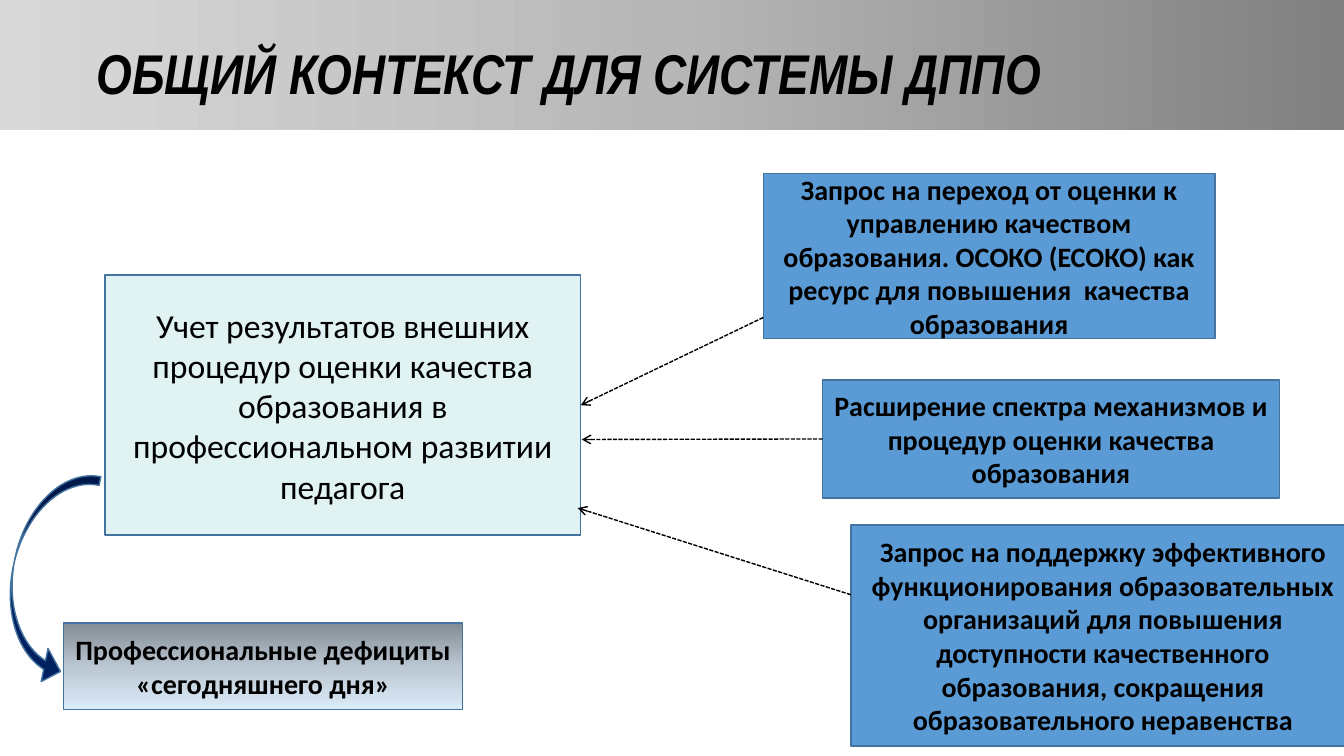
from copy import deepcopy
from dataclasses import dataclass

from lxml import etree
from pptx import Presentation
from pptx.dml.color import RGBColor
from pptx.enum.dml import MSO_LINE
from pptx.enum.shapes import MSO_CONNECTOR, MSO_SHAPE
from pptx.enum.text import MSO_ANCHOR, MSO_AUTO_SIZE, PP_ALIGN
from pptx.oxml.ns import qn
from pptx.util import Inches, Pt

RECT = MSO_SHAPE.RECTANGLE
CURVE = MSO_SHAPE.CURVED_RIGHT_ARROW
STRAIGHT = MSO_CONNECTOR.STRAIGHT
DASH = MSO_LINE.SQUARE_DOT
MIDDLE = MSO_ANCHOR.MIDDLE
FIXED = MSO_AUTO_SIZE.NONE
LEFT, CENTER = PP_ALIGN.LEFT, PP_ALIGN.CENTER
RIGHT_SIDE, LEFT_SIDE = 3, 1


@dataclass(frozen=True)
class Theme:
    head: str = "Arial Narrow"
    body: str = "Calibri"
    ink: str = "000000"
    edge: str = "43739E"
    blue: str = "5B9BD5"
    mint: str = "E1F2F3"
    navy: str = "002060"
    grey: tuple = ("808080", "B7B7B7", "D9D9D9")
    steel: tuple = ("838B93", "BAC6D1", "DCEBF8")
    big: int = 40
    mid: int = 24
    small: int = 20


theme = Theme()

TITLE = "ОБЩИЙ КОНТЕКСТ ДЛЯ СИСТЕМЫ ДППО"
BOXES = {
    "support": (
        "Запрос на поддержку эффективного функционирования образовательных "
        "организаций для повышения доступности качественного образования, "
        "сокращения образовательного неравенства",
        (8.44, 5.21, 5, 2.19), theme.blue, theme.small, True),
    "quality": (
        "Запрос на переход от оценки к управлению качеством образования. "
        "ОСОКО (ЕСОКО) как ресурс для повышения  качества образования",
        (7.57, 1.72, 4.48, 1.64), theme.blue, theme.small, True),
    "results": (
        "Учет результатов внешних процедур оценки качества образования "
        "в профессиональном развитии педагога",
        (1.04, 2.73, 4.72, 2.58), theme.mint, theme.mid, False),
    "methods": (
        "Расширение спектра механизмов и процедур оценки качества образования",
        (8.16, 3.77, 4.53, 1.17), theme.blue, theme.small, True),
    "gaps": (
        "Профессиональные дефициты «сегодняшнего дня»",
        (0.63, 6.18, 3.96, 0.86), theme.steel, theme.small, True),
}
ARROWS = {
    "methods": ((8.16, 4.36), (5.77, 4.36)),
    "quality": ((7.57, 3.15), (5.73, 4.02)),
    "support": ((8.44, 5.9), (5.73, 5.04)),
}
CURVE_AT = (0.12, 4.64, 0.67, 2.14)
CURVE_TURN = 11.7
CURVE_ADJ = (0.13, 0.5, 0.25)


def color(code):
    return RGBColor.from_string(code)


def paint(shape, tone, angle=270):
    fill = shape.fill
    if isinstance(tone, str):
        fill.solid()
        fill.fore_color.rgb = color(tone)
        return
    fill.gradient()
    fill.gradient_angle = angle
    stops = shape._element.spPr.find(qn("a:gradFill")).find(qn("a:gsLst"))
    stops.append(deepcopy(stops[-1]))
    for i, (stop, code) in enumerate(zip(fill.gradient_stops, tone)):
        stop.position = i / (len(tone) - 1)
        stop.color.rgb = color(code)


def write(shape, text, font, size, bold, align, slant=False):
    frame = shape.text_frame
    frame.word_wrap = True
    frame.auto_size = FIXED
    frame.vertical_anchor = MIDDLE
    para = frame.paragraphs[0]
    para.alignment = align
    run = para.add_run()
    run.text = text
    run.font.name = font
    run.font.size = Pt(size)
    run.font.bold = bold
    run.font.italic = slant
    run.font.color.rgb = color(theme.ink)
    return para


def place(slide, kind, area, tone):
    shape = slide.shapes.add_shape(kind, *map(Inches, area))
    shape.shadow.inherit = False
    paint(shape, tone)
    shape.line.color.rgb = color(theme.edge)
    shape.line.width = Pt(1)
    return shape


def link(slide, start, end):
    arrow = slide.shapes.add_connector(STRAIGHT, *map(Inches, start + end))
    arrow.line.color.rgb = color(theme.ink)
    arrow.line.width = Pt(1)
    arrow.line.dash_style = DASH
    tip = etree.SubElement(arrow.line._get_or_add_ln(), qn("a:tailEnd"))
    tip.set("type", "arrow")
    etree.SubElement(arrow._element.spPr, qn("a:effectLst"))
    return arrow


def main():
    deck = Presentation()
    deck.slide_width, deck.slide_height = Inches(13.33), Inches(7.5)
    slide = deck.slides.add_slide(deck.slide_layouts[5])

    title = slide.shapes.title
    title.left, title.top = Inches(0), Inches(0)
    title.width, title.height = deck.slide_width, Inches(1.29)
    paint(title, theme.grey, 180)
    para = write(title, TITLE, theme.head, theme.big, True, LEFT, True)
    para.line_spacing = 1.2
    para.space_before = Pt(theme.big * 0.2)
    props = para._p.get_or_add_pPr()
    props.set("marL", str(Inches(0.37)))
    props.set("indent", str(Inches(0.49)))

    boxes = {}
    for name, (text, area, tone, size, bold) in BOXES.items():
        boxes[name] = place(slide, RECT, area, tone)
        write(boxes[name], text, theme.body, size, bold, CENTER)

    arrows = {name: link(slide, *ends) for name, ends in ARROWS.items()}
    arrows["methods"].begin_connect(boxes["methods"], LEFT_SIDE)
    arrows["quality"].end_connect(boxes["results"], RIGHT_SIDE)

    curve = place(slide, CURVE, CURVE_AT, theme.navy)
    curve.rotation = CURVE_TURN
    for i, ratio in enumerate(CURVE_ADJ):
        curve.adjustments[i] = ratio

    deck.save("out.pptx")


if __name__ == "__main__":
    main()
